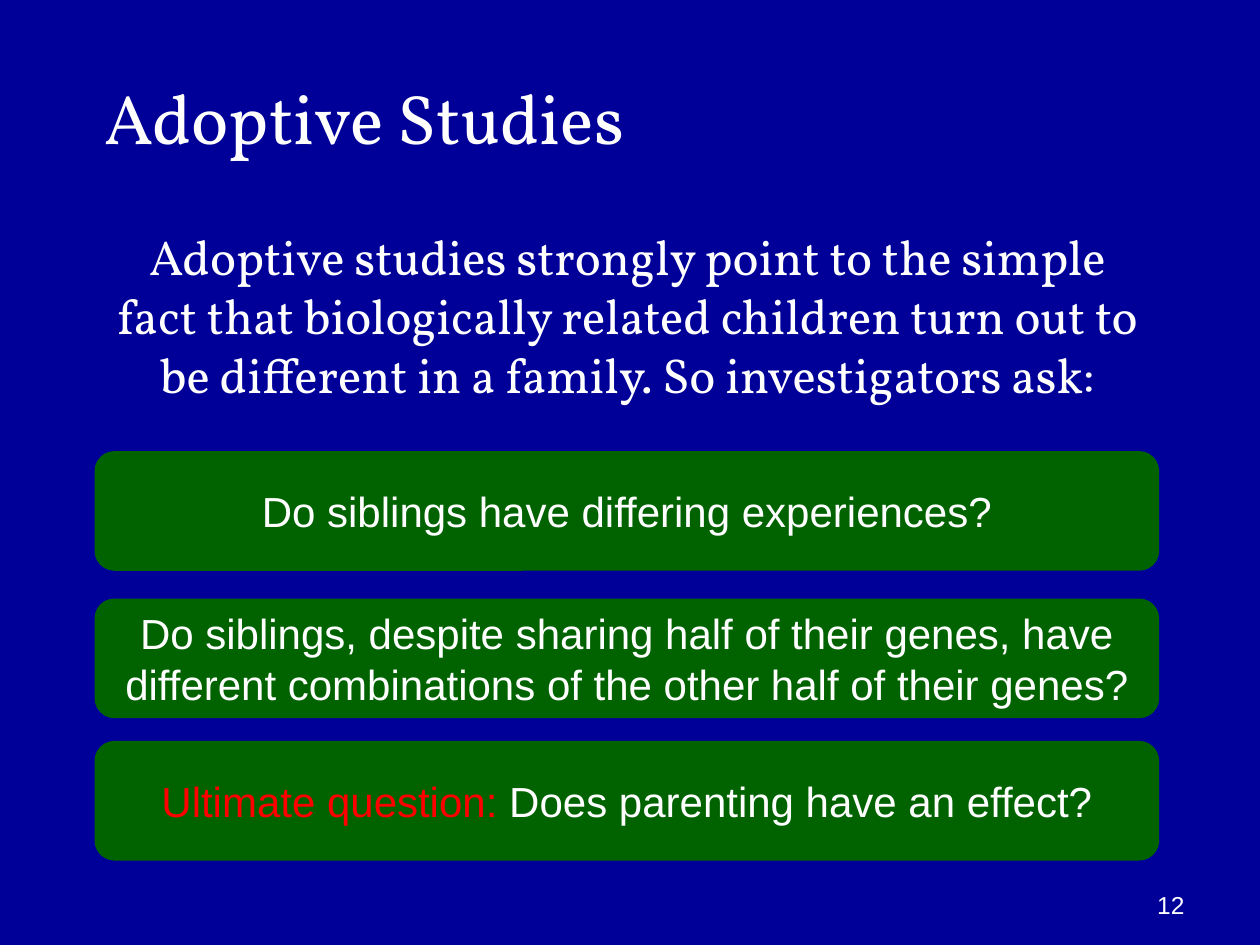
import pptx
import pptx.util
import pptx.dml.color
import pptx.enum.shapes
import pptx.enum.text

Inches = pptx.util.Inches
ALIGN = pptx.enum.text.PP_ALIGN
ANCHOR = pptx.enum.text.MSO_ANCHOR

NAVY, GREEN, WHITE, RED = "000099", "006300", "FFFFFF", "FF0000"
HEADING = "Adoptive Studies"
INTRO = ("Adoptive studies strongly point to the simple fact that biologically "
         "related children turn out to be different in a family. So investigators ask:")
PAGE_NUMBER = "12"
QUESTIONS = [
    (3.58, [("Do siblings have differing experiences?", WHITE)]),
    (4.75, [("Do siblings, despite sharing half of their genes, have different "
             "combinations of the other half of their genes?", WHITE)]),
    (5.88, [("Ultimate question:", RED), (" Does parenting have an effect?", WHITE)]),
]


def rgb(color):
    return pptx.dml.color.RGBColor.from_string(color)


def paint(fill, color):
    fill.solid()
    fill.fore_color.rgb = rgb(color)


def write(shape, pieces, size, font, align, anchor):
    frame = shape.text_frame
    frame.word_wrap = True
    frame.auto_size = pptx.enum.text.MSO_AUTO_SIZE.NONE
    frame.vertical_anchor = anchor
    paragraph = frame.paragraphs[0]
    paragraph.alignment = align
    paragraph.font.size = pptx.util.Pt(size)
    paragraph.font.name = font
    for text, color in pieces:
        run = paragraph.add_run()
        run.text = text
        run.font.color.rgb = rgb(color)


def main():
    deck = pptx.Presentation()
    deck.slide_width, deck.slide_height = Inches(10), Inches(7.5)
    slide = deck.slides.add_slide(deck.slide_layouts[5])
    paint(slide.background.fill, NAVY)

    heading = slide.shapes.title
    heading.left, heading.top = Inches(0.73), Inches(0.3)
    heading.width, heading.height = Inches(8.5), Inches(1.25)
    write(heading, [(HEADING, WHITE)], 40, "Vollkorn", ALIGN.LEFT, ANCHOR.MIDDLE)

    intro = slide.shapes.add_textbox(Inches(0.73), Inches(1.75), Inches(8.5), Inches(1.75))
    write(intro, [(INTRO, WHITE)], 28, "Vollkorn", ALIGN.CENTER, ANCHOR.TOP)

    for top, pieces in QUESTIONS:
        question = slide.shapes.add_shape(
            pptx.enum.shapes.MSO_SHAPE.ROUNDED_RECTANGLE,
            Inches(0.75), Inches(top), Inches(8.45), Inches(0.95))
        question.shadow.inherit = False
        question.line.fill.background()
        paint(question.fill, GREEN)
        write(question, pieces, 24, "Arial", ALIGN.CENTER, ANCHOR.MIDDLE)

    page_number = slide.shapes.add_textbox(Inches(7.17), Inches(6.83), Inches(2.33), Inches(0.52))
    write(page_number, [(PAGE_NUMBER, WHITE)], 14, "Arial", ALIGN.RIGHT, ANCHOR.BOTTOM)

    deck.save("out.pptx")


if __name__ == "__main__":
    main()
